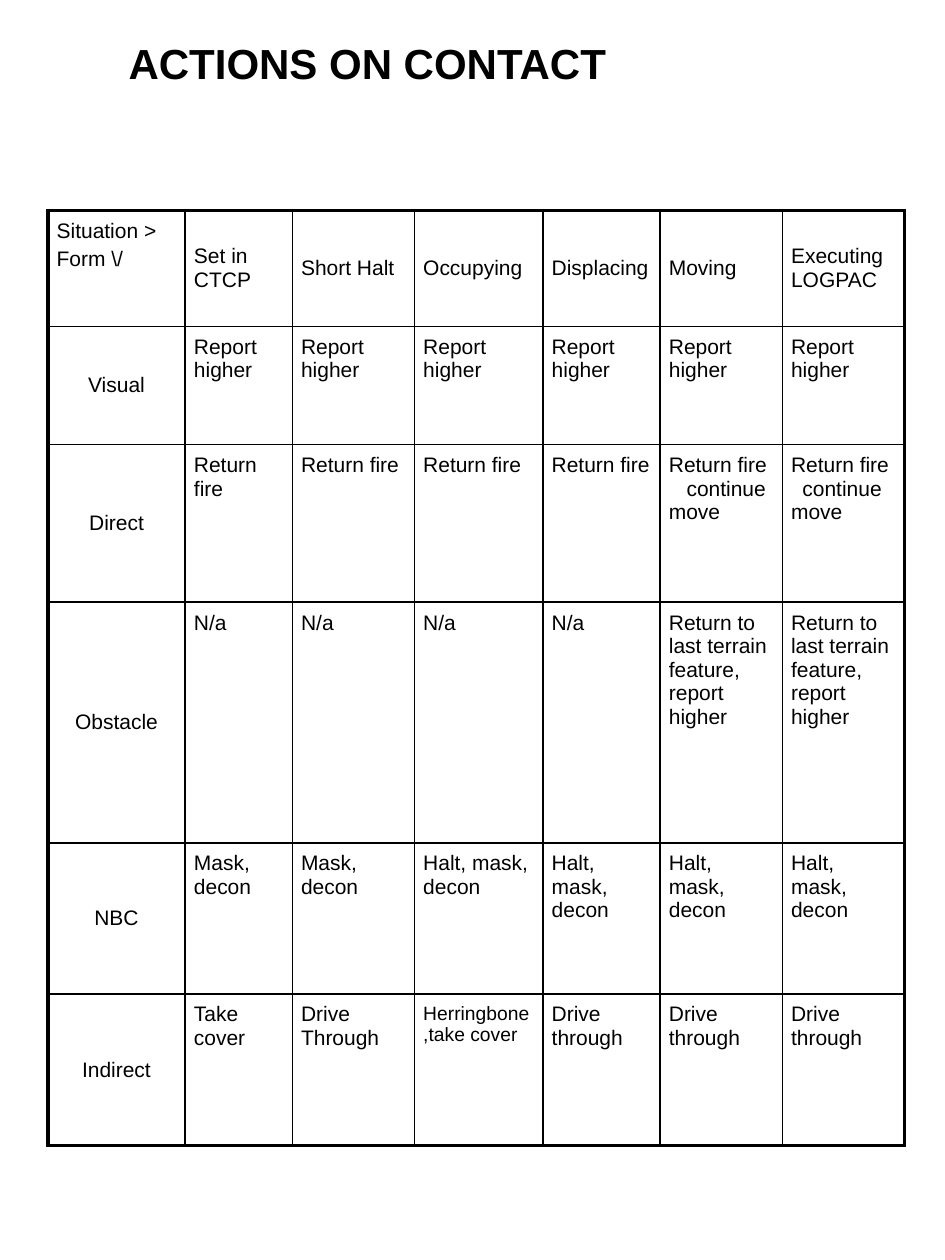
import dataclasses

import pptx
import pptx.dml.color
import pptx.enum.text
import pptx.oxml.ns
import pptx.util
from lxml import etree

Inches = pptx.util.Inches
Pt = pptx.util.Pt
ANCHOR = pptx.enum.text.MSO_ANCHOR
ALIGN = pptx.enum.text.PP_ALIGN


@dataclasses.dataclass(frozen=True)
class Theme:
    font: str = "Arial"
    ink: str = "000000"
    title: float = 24
    body: float = 12
    tight: float = 11
    frame: float = 2.25
    rule: float = 1


THEME = Theme()
COLUMNS = [1.09, 0.85, 0.97, 1.02, 0.93, 0.97, 0.97]
ROWS = [0.92, 0.94, 1.25, 1.91, 1.2, 1.2]
RETREAT = "Return to last terrain feature, report higher"
ADVANCE = "Return fire\ncontinue move"
ACTIONS = [
    ["Situation >\nForm \\/", "Set in CTCP", "Short Halt", "Occupying",
     "Displacing", "Moving", "Executing LOGPAC"],
    ["Visual"] + ["Report higher"] * 6,
    ["Direct"] + ["Return fire"] * 4 + [ADVANCE] * 2,
    ["Obstacle"] + ["N/a"] * 4 + [RETREAT] * 2,
    ["NBC"] + ["Mask, decon"] * 2 + ["Halt, mask, decon"] * 4,
    ["Indirect", "Take cover", "Drive Through", "Herringbone,take cover"]
    + ["Drive through"] * 3,
]
TIGHT_CELL = (5, 3)
CONTINUE_INDENTS = {(2, 5): 0.14, (2, 6): 0.09}


def set_font(para, size, bold=False):
    para.font.name = THEME.font
    para.font.size = Pt(size)
    para.font.bold = bold
    para.font.color.rgb = pptx.dml.color.RGBColor.from_string(THEME.ink)


def add_title(page, text):
    title = page.shapes.title
    title.left, title.top = Inches(0.92), Inches(0.25)
    title.width, title.height = Inches(6), Inches(0.5)
    frame = title.text_frame
    frame.text = text
    frame.vertical_anchor = ANCHOR.MIDDLE
    frame.paragraphs[0].alignment = ALIGN.LEFT
    set_font(frame.paragraphs[0], THEME.title, bold=True)


def set_borders(cell, row, column):
    outer = {
        "a:lnL": column == 0,
        "a:lnR": column == len(COLUMNS) - 1,
        "a:lnT": row == 0,
        "a:lnB": row == len(ROWS) - 1,
    }
    qn = pptx.oxml.ns.qn
    properties = cell._tc.get_or_add_tcPr()
    for position, (tag, is_outer) in enumerate(outer.items()):
        line = etree.Element(qn(tag))
        line.set("w", str(Pt(THEME.frame if is_outer else THEME.rule)))
        fill = etree.SubElement(line, qn("a:solidFill"))
        etree.SubElement(fill, qn("a:srgbClr")).set("val", THEME.ink)
        properties.insert(position, line)


def fill_cell(cell, row, column, text):
    cell.fill.background()
    set_borders(cell, row, column)
    cell.margin_left = cell.margin_right = Inches(0.07)
    cell.margin_top = cell.margin_bottom = Inches(0.07)
    is_heading = (row == 0) != (column == 0)
    cell.vertical_anchor = ANCHOR.MIDDLE if is_heading else ANCHOR.TOP
    cell.text = text
    size = THEME.tight if (row, column) == TIGHT_CELL else THEME.body
    for index, para in enumerate(cell.text_frame.paragraphs):
        para.alignment = ALIGN.CENTER if column == 0 and row else ALIGN.LEFT
        if index and row == 0:
            para.space_before = Pt(2.4)
        elif index:
            indent = Inches(CONTINUE_INDENTS[row, column])
            para._p.get_or_add_pPr().set("indent", str(indent))
        set_font(para, size)


def add_matrix(page):
    box = page.shapes.add_table(
        len(ROWS), len(COLUMNS), Inches(0.38), Inches(1.67),
        Inches(sum(COLUMNS)), Inches(sum(ROWS)))
    table = box.table
    table.first_row = table.horz_banding = False
    for column, width in zip(table.columns, COLUMNS):
        column.width = Inches(width)
    for row, height in zip(table.rows, ROWS):
        row.height = Inches(height)
    for row, texts in enumerate(ACTIONS):
        for column, text in enumerate(texts):
            fill_cell(table.cell(row, column), row, column, text)


def main():
    deck = pptx.Presentation()
    deck.slide_width, deck.slide_height = Inches(7.5), Inches(10)
    page = deck.slides.add_slide(deck.slide_layouts.get_by_name("Title Only"))
    add_matrix(page)
    add_title(page, "ACTIONS ON CONTACT")
    deck.save("out.pptx")


if __name__ == "__main__":
    main()
